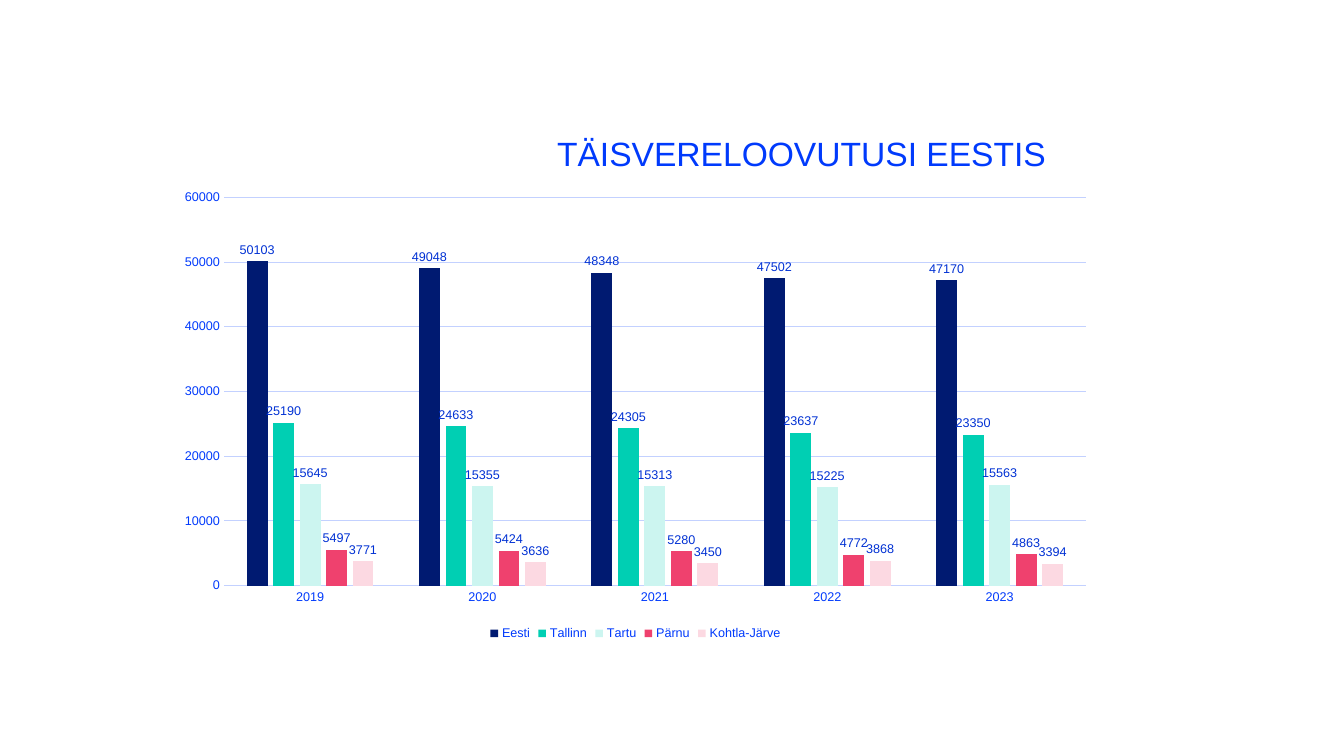
from lxml import etree
from pptx import Presentation, util as u
from pptx.chart.data import CategoryChartData
from pptx.dml.color import RGBColor
from pptx.enum import chart as ch
from pptx.oxml.ns import qn

# Content
TITLE = "TÄISVERELOOVUTUSI EESTIS"
YEARS = ["2019", "2020", "2021", "2022", "2023"]
DONATIONS = {
    "Eesti": [50103, 49048, 48348, 47502, 47170],
    "Tallinn": [25190, 24633, 24305, 23637, 23350],
    "Tartu": [15645, 15355, 15313, 15225, 15563],
    "Pärnu": [5497, 5424, 5280, 4772, 4863],
    "Kohtla-Järve": [3771, 3636, 3450, 3868, 3394],
}
COLORS = {
    "Eesti": "001A71", "Tallinn": "00CFB3", "Tartu": "CCF5F0",
    "Pärnu": "EF416E", "Kohtla-Järve": "FCD9E2",
    "text": "003AFC", "label": "0031D4", "grid": "C3D1FF",
}


def rgb(name):
    return RGBColor.from_string(COLORS[name])


def set_font(font, size, color):
    font.name, font.size, font.bold = "Arial", u.Pt(size), False
    font.color.rgb = rgb(color)


def set_line(line):
    line.color.rgb = rgb("grid")
    line.width = u.Pt(0.75)


def manual_layout(**parts):
    """Layout element holding fractions of the chart area."""
    layout = etree.Element(qn("c:layout"))
    manual = etree.SubElement(layout, qn("c:manualLayout"))
    for tag, val in parts.items():
        etree.SubElement(manual, qn("c:" + tag)).set("val", str(val))
    return layout


def main():
    prs = Presentation()
    prs.slide_width, prs.slide_height = u.Cm(33.87), u.Cm(19.05)
    s = prs.slides.add_slide(prs.slide_layouts[6])

    # Chart
    data = CategoryChartData(number_format="General")
    data.categories = YEARS
    for town, values in DONATIONS.items():
        data.add_series(town, values)
    chart = s.shapes.add_chart(
        ch.XL_CHART_TYPE.COLUMN_CLUSTERED,
        u.Cm(4.19), u.Cm(2.64), u.Cm(23.65), u.Cm(13.61), data).chart
    set_font(chart.font, 10, "Eesti")

    # Title, right of centre
    chart.has_title = True
    title = chart.chart_title
    title.include_in_layout = False
    p = title.text_frame.paragraphs[0]
    p.text = TITLE
    set_font(p.font, 24, "text")
    tx = title.text_frame._txBody.getparent()
    for old in tx.getparent().findall(qn("c:layout")):
        tx.getparent().remove(old)
    tx.addnext(manual_layout(xMode="edge", yMode="edge", x=0.41, y=0.04))

    # Plot area
    area = chart._chartSpace.find(".//" + qn("c:plotArea"))
    for old in area.findall(qn("c:layout")):
        area.remove(old)
    area.insert(0, manual_layout(layoutTarget="inner", xMode="edge", yMode="edge",
                                 x=0.0614, y=0.1715, w=0.9186, h=0.719))

    # Axes
    for axis in (chart.category_axis, chart.value_axis):
        axis.major_tick_mark = axis.minor_tick_mark = ch.XL_TICK_MARK.NONE
        set_font(axis.tick_labels.font, 9, "text")
    set_line(chart.category_axis.format.line)
    value = chart.value_axis
    value.minimum_scale, value.maximum_scale, value.major_unit = 0, 60000, 10000
    value.format.line.fill.background()
    set_line(value.major_gridlines.format.line)

    # Columns and their labels
    plot = chart.plots[0]
    plot.gap_width, plot.overlap, plot.vary_by_categories = 219, -27, False
    for ser in plot.series:
        ser.format.fill.solid()
        ser.format.fill.fore_color.rgb = rgb(ser.name)
        labels = ser.data_labels
        labels.show_value = True
        labels.position = ch.XL_LABEL_POSITION.OUTSIDE_END
        set_font(labels.font, 9, "label")

    # Legend
    chart.has_legend = True
    chart.legend.position = ch.XL_LEGEND_POSITION.BOTTOM
    chart.legend.include_in_layout = False
    set_font(chart.legend.font, 9, "text")

    prs.save("out.pptx")


if __name__ == "__main__":
    main()
